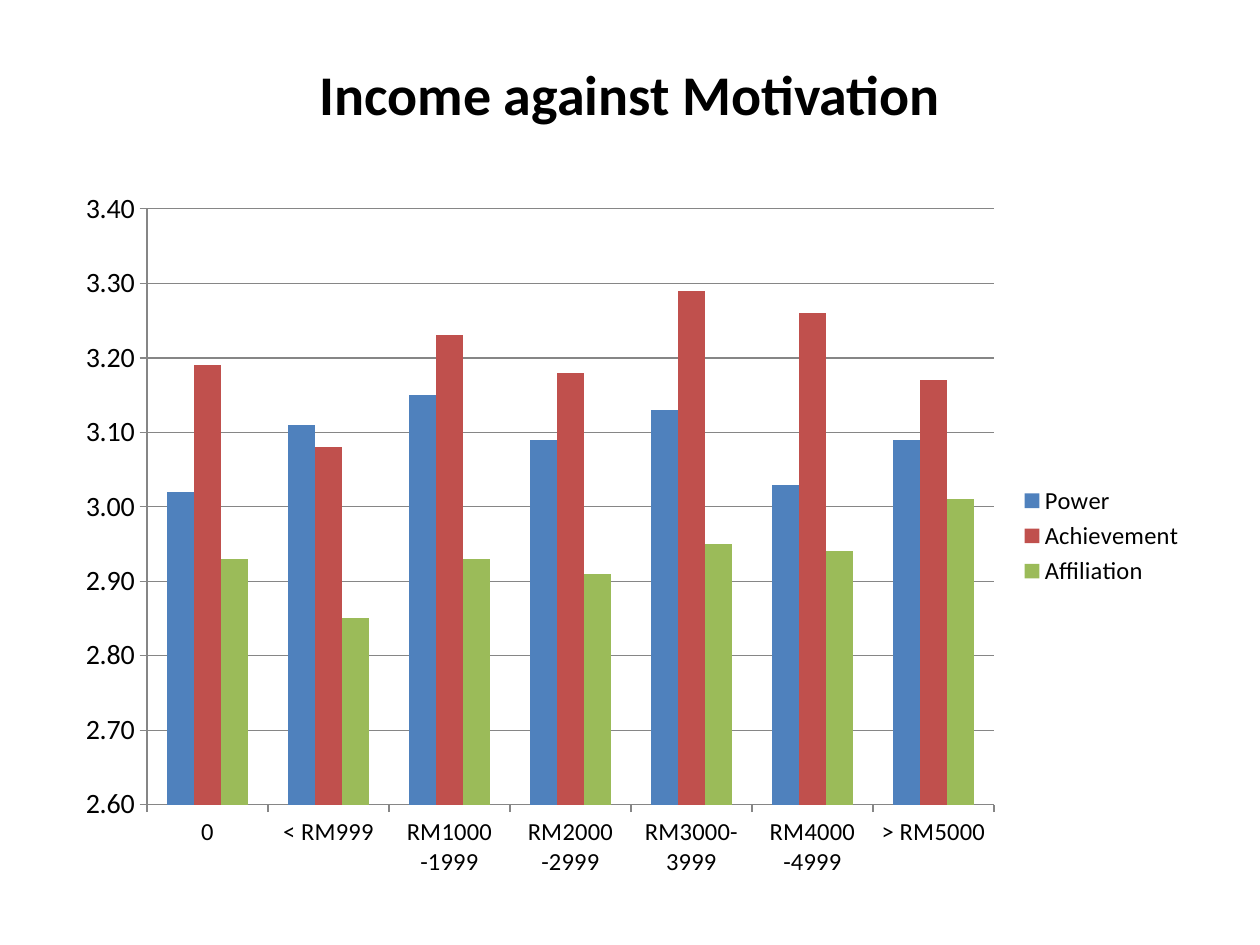
from dataclasses import dataclass

from lxml import etree
from pptx import Presentation
from pptx import util as u
from pptx.chart.data import CategoryChartData
from pptx.dml.color import RGBColor
from pptx.enum import chart as ch
from pptx.enum import text
from pptx.oxml.ns import qn

# Content
TITLE = "Income against Motivation"
INCOMES = ["0", "< RM999", "RM1000 -1999", "RM2000 -2999",
           "RM3000-3999", "RM4000 -4999", "> RM5000"]
MOTIVES = {
    "Power": [3.02, 3.11, 3.15, 3.09, 3.13, 3.03, 3.09],
    "Achievement": [3.19, 3.08, 3.23, 3.18, 3.29, 3.26, 3.17],
    "Affiliation": [2.93, 2.85, 2.93, 2.91, 2.95, 2.94, 3.01],
}


@dataclass(frozen=True)
class Theme:
    font: str = "Calibri"
    ink: str = "000000"
    rule: str = "868686"
    bars: tuple = ("4F81BD", "C0504D", "9BBB59")
    title: int = 32
    values: int = 16
    labels: int = 14


THEME = Theme()

# Geometry in px: left, top, width, height
PX = u.Inches(1) / 126
SLIDE = (1260, 945)
TITLE_BOX = (63, 38, 1134, 110)
CHART_BOX = (63, 179, 1134, 714)
PLOT_BOX = (147, 209, 847, 596)


def emu(lengths):
    return [round(length * PX) for length in lengths]


def style_font(font, size, bold=False):
    font.name, font.size, font.bold = THEME.font, u.Pt(size), bold
    font.color.rgb = RGBColor.from_string(THEME.ink)


def style_line(line):
    line.color.rgb = RGBColor.from_string(THEME.rule)
    line.width = u.Pt(0.75)


def place_plot(chart):
    """Fix the inner plot area as fractions of the chart frame."""
    left, top, width, height = CHART_BOX
    x, y, w, h = PLOT_BOX
    parts = {"layoutTarget": "inner", "xMode": "edge", "yMode": "edge",
             "x": round((x - left) / width, 4), "y": round((y - top) / height, 4),
             "w": round(w / width, 4), "h": round(h / height, 4)}
    area = chart.plots[0]._element.getparent()
    for old in area.findall(qn("c:layout")):
        area.remove(old)
    layout = etree.Element(qn("c:layout"))
    manual = etree.SubElement(layout, qn("c:manualLayout"))
    for name, value in parts.items():
        etree.SubElement(manual, qn(f"c:{name}")).set("val", str(value))
    area.insert(0, layout)


def add_title(page):
    box = page.shapes.add_textbox(*emu(TITLE_BOX))
    frame = box.text_frame
    frame.word_wrap = True
    frame.vertical_anchor = text.MSO_ANCHOR.MIDDLE
    para = frame.paragraphs[0]
    para.alignment = text.PP_ALIGN.CENTER
    span = para.add_run()
    span.text = TITLE
    style_font(span.font, THEME.title, bold=True)


def add_income_chart(page):
    data = CategoryChartData(number_format="###0.00")
    data.categories = INCOMES
    for name, scores in MOTIVES.items():
        data.add_series(name, scores)
    chart = page.shapes.add_chart(
        ch.XL_CHART_TYPE.COLUMN_CLUSTERED, *emu(CHART_BOX), data).chart
    chart.has_title = False
    style_font(chart.font, THEME.labels)

    # Bars
    plot = chart.plots[0]
    plot.gap_width, plot.overlap, plot.vary_by_categories = 150, 0, False
    for series, color in zip(plot.series, THEME.bars):
        series.format.fill.solid()
        series.format.fill.fore_color.rgb = RGBColor.from_string(color)

    # Axes
    for axis, size in ((chart.category_axis, THEME.labels),
                       (chart.value_axis, THEME.values)):
        style_font(axis.tick_labels.font, size)
        style_line(axis.format.line)
        axis.major_tick_mark = ch.XL_TICK_MARK.OUTSIDE
        axis.minor_tick_mark = ch.XL_TICK_MARK.NONE
    scale = chart.value_axis
    scale.minimum_scale, scale.maximum_scale, scale.major_unit = 2.6, 3.4, 0.1
    scale.tick_labels.number_format = "###0.00"
    scale.tick_labels.number_format_is_linked = False
    scale.has_major_gridlines = True
    style_line(scale.major_gridlines.format.line)

    # Legend and plot area
    chart.has_legend = True
    chart.legend.position = ch.XL_LEGEND_POSITION.RIGHT
    chart.legend.include_in_layout = False
    style_font(chart.legend.font, THEME.labels)
    place_plot(chart)


def main():
    deck = Presentation()
    deck.slide_width, deck.slide_height = emu(SLIDE)
    page = deck.slides.add_slide(deck.slide_layouts[6])
    add_title(page)
    add_income_chart(page)
    deck.save("out.pptx")


if __name__ == "__main__":
    main()
